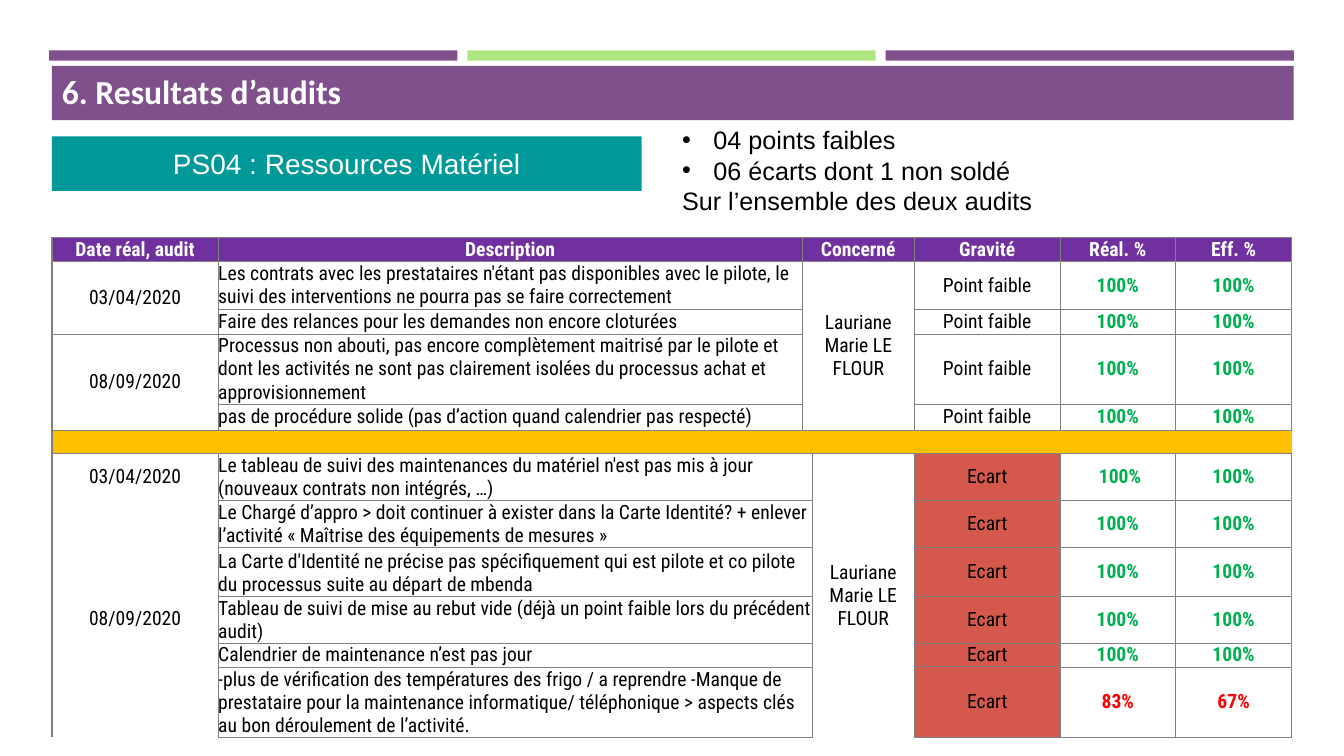
from lxml.etree import SubElement
from pptx import Presentation
from pptx.dml.color import RGBColor
from pptx.enum.shapes import MSO_SHAPE
from pptx.enum.text import MSO_ANCHOR, PP_ALIGN
from pptx.oxml.ns import qn
from pptx.util import Cm, Pt

TITLE = "6. Resultats d’audits"
PROCESS = "PS04 : Ressources Matériel"
SUMMARY = [("04 points faibles", True), ("06 écarts dont 1 non soldé", True),
           ("Sur l’ensemble des deux audits", False)]
HEADERS = [(0, 1, "Date réal, audit"), (1, 1, "Description"), (2, 2, "Concerné"),
           (4, 1, "Gravité"), (5, 1, "Réal. %"), (6, 1, "Eff. %")]
OWNER = "Lauriane Marie LE FLOUR"
WEAK_POINTS = [
    ("Les contrats avec les prestataires n'étant pas disponibles avec le pilote, le suivi des "
     "interventions ne pourra pas se faire correctement", "100%", "100%"),
    ("Faire des relances pour les demandes non encore cloturées", "100%", "100%"),
    ("Processus non abouti, pas encore complètement maitrisé par le pilote et dont les activités "
     "ne sont pas clairement isolées du processus achat et approvisionnement", "100%", "100%"),
    ("pas de procédure solide (pas d’action quand calendrier pas respecté)", "100%", "100%"),
]
GAPS = [
    ("Le tableau de suivi des maintenances du matériel n'est pas mis à jour "
     "(nouveaux contrats non intégrés, …)", " 100%", "100%"),
    ("Le Chargé d’appro > doit continuer à exister dans la Carte Identité? + enlever "
     "l’activité « Maîtrise des équipements de mesures »", "100%", "100%"),
    ("La Carte d'Identité ne précise pas spécifiquement qui est pilote et co pilote "
     "du processus suite au départ de mbenda", "100%", "100%"),
    ("Tableau de suivi de mise au rebut vide (déjà un point faible lors du précédent audit)",
     "100%", "100%"),
    ("Calendrier de maintenance n’est pas jour", "100%", "100%"),
    ("-plus de vérification des températures des frigo / a reprendre -Manque de prestataire "
     "pour la maintenance informatique/ téléphonique > aspects clés au bon déroulement de "
     "l’activité.", "83%", "67%"),
]
COLUMN_WIDTHS = [4.19, 14.71, 0.25, 2.59, 3.66, 2.92, 2.92]
ROW_HEIGHTS = [0.58, 1.22, 0.61, 1.73, 0.64, 0.58, 1.17, 1.17, 1.22, 1.17, 0.58, 1.73]
WEAK_TOP, SEPARATOR, GAP_TOP = 1, 5, 6

THEME = {
    "purple": "7F508B", "lime": "ADE67F", "teal": "009999", "header": "7030A0",
    "gold": "FFC000", "coral": "D4594C", "green": "00B050", "red": "FF0000",
    "white": "FFFFFF", "black": "000000", "border": "808080",
    "title_font": "Calibri", "body_font": "Arial", "table_font": "Roboto Condensed",
    "title_size": 24, "process_size": 20, "summary_size": 18, "table_size": 14,
    "thin": 0.5, "thick": 1,
}
PLAIN_TABLE_STYLE = "{2D5ABB26-0587-4C30-8999-92F81FD0307C}"


def color(name):
    return RGBColor.from_string(THEME[name])


def set_font(para, family, size, tint, bold=False):
    para.font.name = THEME[family]
    para.font.size = Pt(THEME[size])
    para.font.color.rgb = color(tint)
    para.font.bold = bold


def add_bar(page, left, top, width, height, fill):
    bar = page.shapes.add_shape(MSO_SHAPE.RECTANGLE, Cm(left), Cm(top), Cm(width), Cm(height))
    bar.shadow.inherit = False
    bar.fill.solid()
    bar.fill.fore_color.rgb = color(fill)
    bar.line.fill.background()
    return bar


def add_label(bar, text, family, size, align, anchor, bold=False):
    bar.text_frame.vertical_anchor = anchor
    para = bar.text_frame.paragraphs[0]
    para.text = text
    para.alignment = align
    set_font(para, family, size, "white", bold)


def add_summary(page):
    box = page.shapes.add_textbox(Cm(16.94), Cm(3.02), Cm(12.5), Cm(2.57))
    frame = box.text_frame
    frame.word_wrap = True
    for index, (text, bulleted) in enumerate(SUMMARY):
        para = frame.add_paragraph() if index else frame.paragraphs[0]
        para.text = text
        if bulleted:
            properties = para._p.get_or_add_pPr()
            properties.set("marL", str(Cm(0.79)))
            properties.set("indent", str(-Cm(0.79)))
            SubElement(properties, qn("a:buFont"), typeface="Arial")
            SubElement(properties, qn("a:buChar"), char="•")
        set_font(para, "body_font", "summary_size", "black")


def add_border(cell, side, weight):
    line = SubElement(cell._tc.get_or_add_tcPr(), qn("a:ln" + side), w=str(Pt(THEME[weight])))
    solid = SubElement(line, qn("a:solidFill"))
    SubElement(solid, qn("a:srgbClr"), val=THEME["border"])


def fill_block(table, row, column, text="", rows=1, columns=1, fill=None, tint="black",
               bold=False, align=PP_ALIGN.CENTER, anchor=MSO_ANCHOR.MIDDLE, open_sides="",
               thick_sides=""):
    last_row, last_column = row + rows - 1, column + columns - 1
    origin = table.cell(row, column)
    if rows * columns > 1:
        origin.merge(table.cell(last_row, last_column))
    for y in range(row, last_row + 1):
        for x in range(column, last_column + 1):
            cell = table.cell(y, x)
            block_edges = {"L": x == column, "R": x == last_column,
                           "T": y == row, "B": y == last_row}
            table_edges = {"L": x == 0, "R": x == len(COLUMN_WIDTHS) - 1,
                           "T": y == 0, "B": y == len(ROW_HEIGHTS) - 1}
            for side, on_edge in block_edges.items():
                if on_edge and side not in open_sides:
                    heavy = table_edges[side] or side in thick_sides
                    add_border(cell, side, "thick" if heavy else "thin")
            if fill:
                cell.fill.solid()
                cell.fill.fore_color.rgb = color(fill)
            else:
                cell.fill.background()
            cell.margin_left = cell.margin_right = cell.margin_top = cell.margin_bottom = 0
    origin.vertical_anchor = anchor
    para = origin.text_frame.paragraphs[0]
    para.alignment = align
    if text:
        para.text = text
    else:
        SubElement(para._p, qn("a:endParaRPr"), sz=str(THEME["table_size"] * 100))
    set_font(para, "table_font", "table_size", tint, bold)


def fill_findings(table, top, findings, severity, span, anchor, **severity_look):
    for row, (description, *rates) in enumerate(findings, top):
        fill_block(table, row, 1, description, columns=span, align=PP_ALIGN.LEFT, anchor=anchor)
        fill_block(table, row, 4, severity, **severity_look)
        for column, rate in enumerate(rates, 5):
            tint = "green" if rate.strip() == "100%" else "red"
            fill_block(table, row, column, rate, tint=tint, bold=True)


def add_audit_table(page):
    frame = page.shapes.add_table(len(ROW_HEIGHTS), len(COLUMN_WIDTHS), Cm(1.31), Cm(5.99),
                                  Cm(sum(COLUMN_WIDTHS)), Cm(sum(ROW_HEIGHTS)))
    table = frame.table
    table.first_row = table.horz_banding = False
    table._tbl.tblPr.find(qn("a:tableStyleId")).text = PLAIN_TABLE_STYLE
    for column, width in zip(table.columns, COLUMN_WIDTHS):
        column.width = Cm(width)
    for row, height in zip(table.rows, ROW_HEIGHTS):
        row.height = Cm(height)
    for column, span, text in HEADERS:
        fill_block(table, 0, column, text, columns=span, fill="header", tint="white", bold=True)
    fill_block(table, WEAK_TOP, 0, "03/04/2020", rows=2)
    fill_block(table, WEAK_TOP + 2, 0, "08/09/2020", rows=2)
    fill_block(table, WEAK_TOP, 2, OWNER, rows=len(WEAK_POINTS), columns=2)
    fill_findings(table, WEAK_TOP, WEAK_POINTS, "Point faible", 1, MSO_ANCHOR.MIDDLE)
    fill_block(table, SEPARATOR, 0, columns=len(COLUMN_WIDTHS), fill="gold", open_sides="B")
    fill_block(table, GAP_TOP, 0, "03/04/2020", open_sides="TB")
    fill_block(table, GAP_TOP + 1, 0, "08/09/2020", rows=len(GAPS) - 1, open_sides="T")
    fill_block(table, GAP_TOP, 3, OWNER, rows=len(GAPS), open_sides="T")
    fill_findings(table, GAP_TOP, GAPS, "Ecart", 2, MSO_ANCHOR.BOTTOM,
                  fill="coral", thick_sides="TB")


def main():
    deck = Presentation()
    deck.slide_width, deck.slide_height = Cm(33.87), Cm(19.05)
    page = deck.slides.add_slide(deck.slide_layouts[6])
    for index, fill in enumerate(["purple", "lime", "purple"]):
        add_bar(page, 1.24 + 10.54 * index, 1.27, 10.29, 0.26, fill)
    title = add_bar(page, 1.31, 1.66, 31.29, 1.37, "purple")
    add_label(title, TITLE, "title_font", "title_size", PP_ALIGN.LEFT, MSO_ANCHOR.TOP, True)
    process = add_bar(page, 1.31, 3.44, 14.86, 1.37, "teal")
    add_label(process, PROCESS, "body_font", "process_size", PP_ALIGN.CENTER, MSO_ANCHOR.MIDDLE)
    add_summary(page)
    add_audit_table(page)
    deck.save("out.pptx")


if __name__ == "__main__":
    main()
